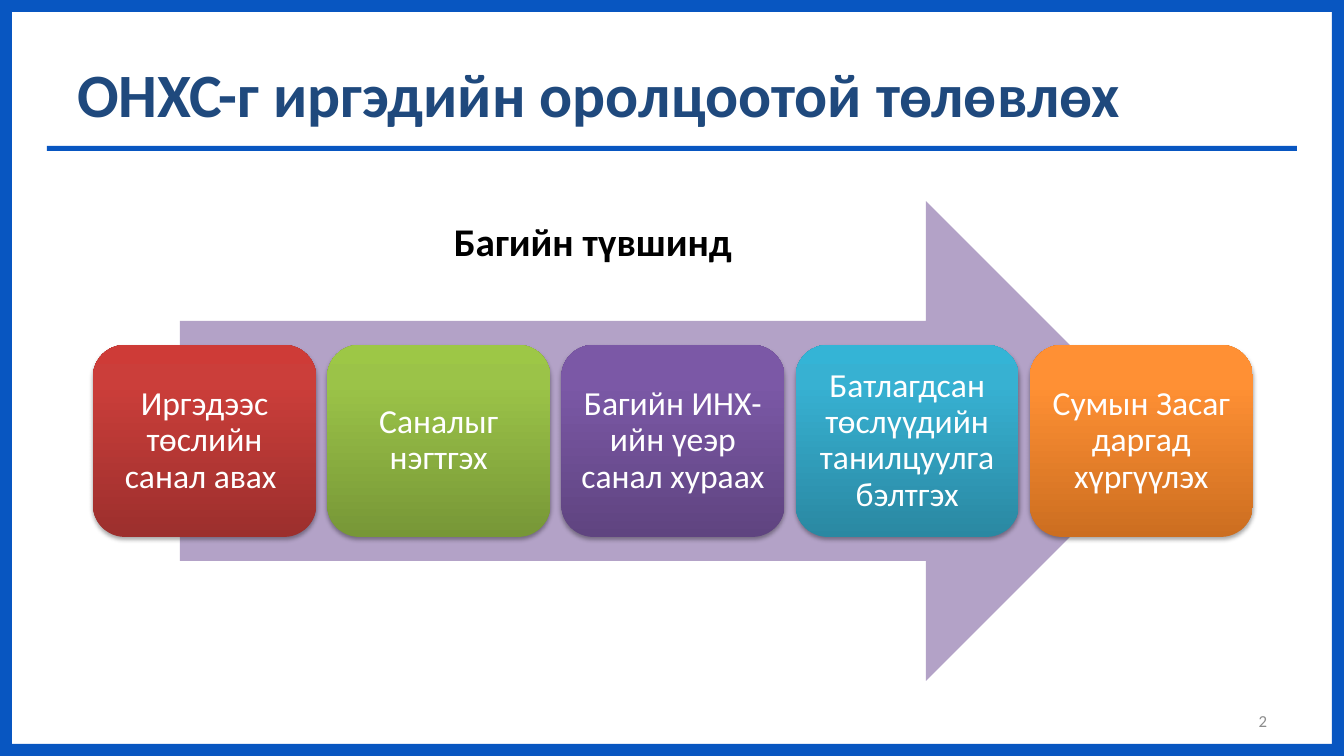
from lxml import etree
from pptx import Presentation
from pptx import util as u
from pptx.dml.color import RGBColor
from pptx.enum import shapes, text
from pptx.oxml import parse_xml
from pptx.oxml.ns import nsdecls, qn

PX = 914400 / 100.8
SLIDE_W, SLIDE_H = 1344, 756
BLUE = "0856C1"
STEPS = [
    ("Иргэдээс төслийн санал авах ", ("9C2F2D", "CB3E3A", "CE3B37")),
    ("Саналыг нэгтгэх", ("779737", "9BC348", "9DC746")),
    ("Багийн ИНХ-ийн үеэр санал хураах", ("5F4480", "7B58A6", "7C57A8")),
    ("Батлагдсан төслүүдийн танилцуулга бэлтгэх", ("2A88A2", "37B1D2", "34B4D6")),
    ("Сумын Засаг даргад хүргүүлэх", ("CC6E20", "FF9034", "FF9136")),
]


def px(length):
    return u.Emu(round(length * PX))


def color(hex_code):
    return RGBColor.from_string(hex_code)


def add_block(slide, preset, box, fill=None):
    block = slide.shapes.add_shape(preset, *map(px, box))
    block.shadow.inherit = False
    block.line.fill.background()
    if fill:
        block.fill.solid()
        block.fill.fore_color.rgb = color(fill)
    return block


def write(frame, words, size, hex_code, bold=False, align=text.PP_ALIGN.LEFT,
          anchor=text.MSO_ANCHOR.MIDDLE):
    frame.word_wrap = True
    frame.vertical_anchor = anchor
    paragraph = frame.paragraphs[0]
    paragraph.alignment = align
    run = paragraph.add_run()
    run.text = words
    run.font.name = "Calibri"
    run.font.size = u.Pt(size)
    run.font.bold = bold
    run.font.color.rgb = color(hex_code)
    return paragraph


def add_label(slide, box, words, size, hex_code, **style):
    label = slide.shapes.add_textbox(*map(px, box))
    write(label.text_frame, words, size, hex_code, **style)


def shade(block, stops):
    """Fill upwards through three colours and cast a soft shadow below."""
    block.fill.gradient()
    gradient = block.fill._xPr.find(qn("a:gradFill"))
    stop_list = gradient.find(qn("a:gsLst"))
    for stop in list(stop_list):
        stop_list.remove(stop)
    for position, hex_code in zip((0, 80000, 100000), stops):
        stop = etree.SubElement(stop_list, qn("a:gs"), pos=str(position))
        etree.SubElement(stop, qn("a:srgbClr"), val=hex_code)
    gradient.find(qn("a:lin")).set("ang", "16200000")
    block._element.spPr.find(qn("a:effectLst")).append(parse_xml(
        f'<a:outerShdw {nsdecls("a")} blurRad="40000" dist="23000" dir="5400000" '
        'rotWithShape="0"><a:srgbClr val="000000"><a:alpha val="35000"/>'
        '</a:srgbClr></a:outerShdw>'))


def add_frame(slide, box, thickness):
    left, top, width, height = box
    bars = [
        (left, top, width, thickness),
        (left, top + height - thickness, width, thickness),
        (left, top, thickness, height),
        (left + width - thickness, top, thickness, height),
    ]
    for bar in bars:
        add_block(slide, shapes.MSO_SHAPE.RECTANGLE, bar, BLUE)


def add_heading(slide, box):
    left, top, width, height = box
    add_block(slide, shapes.MSO_SHAPE.RECTANGLE,
              (left - 20, top + 116, width + 40, 5), BLUE)
    title = slide.shapes.title
    title.left, title.top, title.width, title.height = map(px, box)
    write(title.text_frame, "ОНХС-г иргэдийн оролцоотой төлөвлөх", 44, "1F497D", bold=True)


def add_process(slide, box, gap=11):
    """Draw the arrow with the row of steps across its middle."""
    left, top, width, height = box
    inset = width * 0.075
    add_block(slide, shapes.MSO_SHAPE.RIGHT_ARROW,
              (left + inset, top, width - 2 * inset, height), "B3A2C7")
    step_w = (width - gap * (len(STEPS) - 1)) / len(STEPS)
    step_h = height * 0.4
    for index, (words, stops) in enumerate(STEPS):
        step = add_block(slide, shapes.MSO_SHAPE.ROUNDED_RECTANGLE,
                         (left + index * (step_w + gap), top + (height - step_h) / 2,
                          step_w, step_h))
        shade(step, stops)
        frame = step.text_frame
        frame.margin_left = frame.margin_right = px(10)
        frame.margin_top = frame.margin_bottom = px(10)
        paragraph = write(frame, words, 24, "FFFFFF", align=text.PP_ALIGN.CENTER)
        paragraph.line_spacing = 0.9
    add_label(slide, (left + 351, top + 11, 401, 57), "Багийн түвшинд", 28, "000000",
              bold=True, anchor=text.MSO_ANCHOR.TOP)


def main():
    deck = Presentation()
    deck.slide_width, deck.slide_height = px(SLIDE_W), px(SLIDE_H)
    slide = deck.slides.add_slide(deck.slide_layouts[5])
    add_frame(slide, (0, 0, SLIDE_W, SLIDE_H), 12)
    add_heading(slide, (67, 30, 1210, 126))
    add_process(slide, (93, 201, 1160, 480))
    add_label(slide, (964, 701, 313, 40), "2", 12, "8C8C8C", align=text.PP_ALIGN.RIGHT)
    deck.save("out.pptx")


if __name__ == "__main__":
    main()
